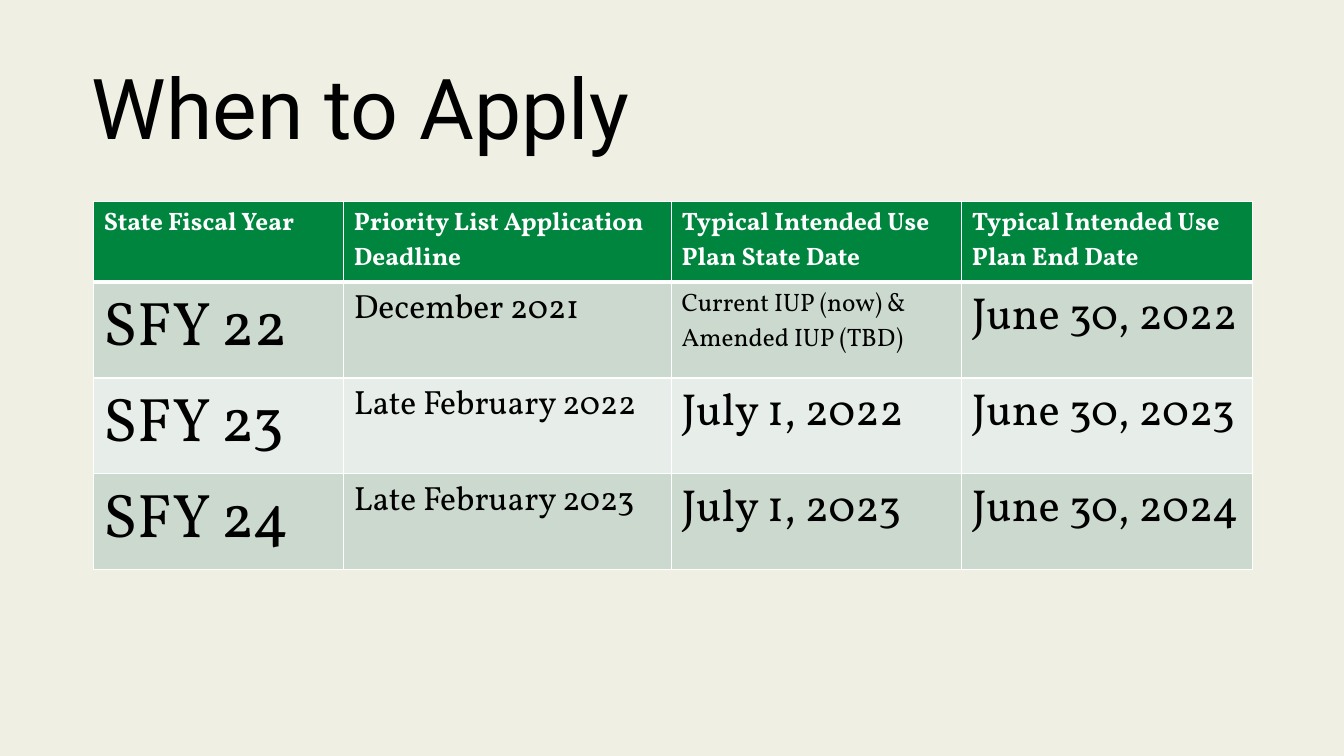
from lxml import etree
from pptx import Presentation
from pptx.dml.color import RGBColor as Rgb
from pptx.enum.text import MSO_ANCHOR as Anchor, MSO_AUTO_SIZE as Fit, PP_ALIGN as Align
from pptx.oxml.ns import qn
from pptx.util import Inches, Pt

HUES = {"page": "EFEFE3", "black": "000000", "white": "FFFFFF",
        "head": "00853F", "odd": "CCD9CF", "even": "E7EDE8"}
WIDTHS = [2.48, 3.25, 2.88, 2.88]
HEIGHTS = [0.79, 0.95, 0.95, 0.95]
SIZES = [44, 24, 32, 32]
ROWS = [
    ["State Fiscal Year", "Priority List Application Deadline",
     "Typical Intended Use Plan State Date", "Typical Intended Use Plan End Date"],
    ["SFY 22", "December 2021", "Current IUP (now) & Amended IUP (TBD)", "June 30, 2022"],
    ["SFY 23", "Late February 2022", "July 1, 2022", "June 30, 2023"],
    ["SFY 24", "Late February 2023", "July 1, 2023", "June 30, 2024"],
]


def hue(name):
    return Rgb.from_string(HUES[name])


def style(font, color, **form):
    font.color.rgb = hue(color)
    for key, value in form.items():
        setattr(font, key, value)


def add_title(slide, text):
    title = slide.shapes.title
    box = {"left": 0.81, "top": 0.58, "width": 11.72, "height": 0.94}
    for key, value in box.items():
        setattr(title, key, Inches(value))
    frame = title.text_frame
    frame.text = text
    frame.auto_size = Fit.NONE
    frame.vertical_anchor = Anchor.MIDDLE
    para = frame.paragraphs[0]
    para.alignment = Align.LEFT
    style(para.runs[0].font, "black", name="Roboto", size=Pt(60))


def add_edges(cell, base):
    # Borders go ahead of the fill in the cell properties
    props = cell._tc.get_or_add_tcPr()
    edges = {"lnL": 1, "lnR": 1, "lnT": 1, "lnB": base}
    for spot, (tag, width) in enumerate(edges.items()):
        line = etree.Element(qn(f"a:{tag}"), w=str(Pt(width)))
        fill = etree.SubElement(line, qn("a:solidFill"))
        etree.SubElement(fill, qn("a:srgbClr"), val=HUES["white"])
        props.insert(spot, line)


def fill_cell(cell, text, fill, color, size, bold, base):
    cell.text = text
    cell.fill.solid()
    cell.fill.fore_color.rgb = hue(fill)
    font = cell.text_frame.paragraphs[0].runs[0].font
    style(font, color, name="Vollkorn", size=Pt(size), bold=bold)
    add_edges(cell, base)


def add_dates(slide):
    frame = slide.shapes.add_table(
        len(ROWS), len(WIDTHS), Inches(0.93), Inches(2),
        Inches(sum(WIDTHS)), Inches(sum(HEIGHTS)))
    table = frame.table
    for col, width in zip(table.columns, WIDTHS):
        col.width = Inches(width)
    for row, height in zip(table.rows, HEIGHTS):
        row.height = Inches(height)
    for r, texts in enumerate(ROWS):
        for c, text in enumerate(texts):
            cell = table.cell(r, c)
            if r == 0:
                fill_cell(cell, text, "head", "white", 18, True, 3)
            else:
                # The long plan note takes a smaller size
                size = 18 if (r, c) == (1, 2) else SIZES[c]
                fill = "odd" if r % 2 else "even"
                fill_cell(cell, text, fill, "black", size, False, 1)
    # The first body row shares the thick rule under the header
    for c in range(len(WIDTHS)):
        props = table.cell(1, c)._tc.tcPr
        props.find(qn("a:lnT")).set("w", str(Pt(3)))


def main():
    deck = Presentation()
    deck.slide_width, deck.slide_height = Inches(13.33), Inches(7.5)
    slide = deck.slides.add_slide(deck.slide_layouts[5])
    back = slide.background.fill
    back.solid()
    back.fore_color.rgb = hue("page")
    add_title(slide, "When to Apply")
    add_dates(slide)
    deck.save("out.pptx")


if __name__ == "__main__":
    main()
